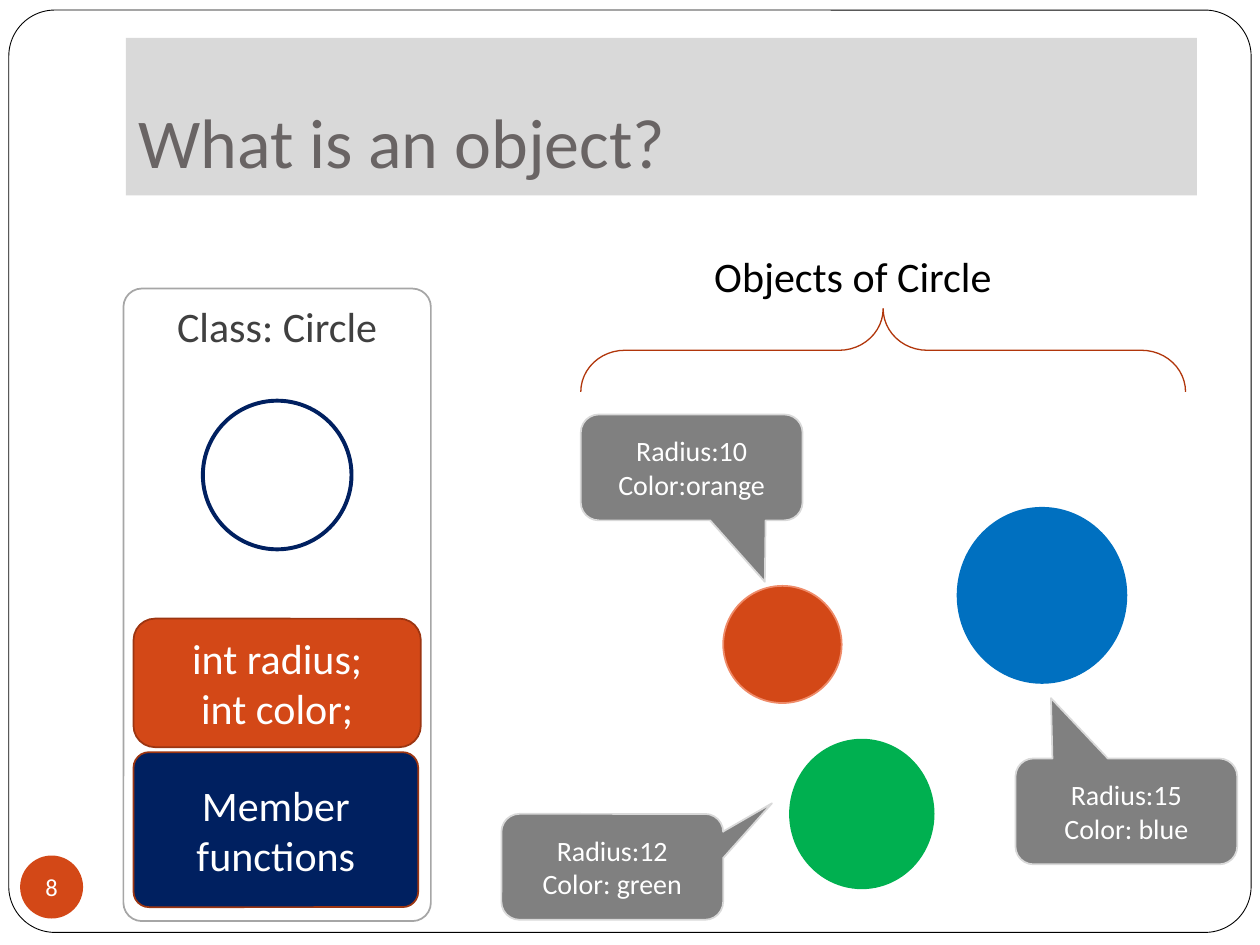
from dataclasses import dataclass
from typing import Optional

from pptx import Presentation
from pptx.dml.color import RGBColor
from pptx.enum.shapes import MSO_SHAPE as SHAPE
from pptx.enum.text import MSO_ANCHOR as ANCHOR, PP_ALIGN as ALIGN
from pptx.util import Inches, Pt

COLUMNS, ROWS = 100, 75
CELL = Inches(10) // COLUMNS
FONT = "Calibri"
COLORS = {
    "white": "FFFFFF", "black": "000000", "band": "D9D9D9", "title": "696464",
    "orange": "D34817", "rust": "9C3511", "peach": "EF8C6A", "brace": "B1360B",
    "navy": "002060", "blue": "0070C0", "green": "00B050",
    "gray": "808080", "frame": "A6A6A6", "ink": "404040",
}


@dataclass
class Box:
    """A shape placed in grid columns and rows."""
    kind: SHAPE
    col: float
    row: float
    cols: float
    rows: float
    fill: Optional[str] = None
    line: Optional[str] = None
    weight: float = 1
    adjust: tuple = ()
    rotation: float = 0


@dataclass
class CircleObject:
    col: float
    row: float
    cols: float
    rows: float
    fill: str
    line: str


@dataclass
class Callout:
    col: float
    row: float
    tip: tuple
    text: str


CIRCLES = [
    CircleObject(57.4, 46.5, 9.4, 9.3, "orange", "peach"),
    CircleObject(76, 40.3, 13.4, 13.9, "blue", "blue"),
    CircleObject(62.7, 58.7, 11.4, 11.8, "green", "green"),
]
CALLOUTS = [
    Callout(46.1, 32.9, (0.33, 1.08), "Radius:10\nColor:orange"),
    Callout(80.6, 60.2, (-0.34, -1.07), "Radius:15\nColor: blue"),
    Callout(39.8, 64.6, (0.72, -0.6), "Radius:12\nColor: green"),
]


def rgb(name: str) -> RGBColor:
    return RGBColor.from_string(COLORS[name])


def grid(*lengths: float) -> list:
    return [round(n * CELL) for n in lengths]


def draw(slide, box: Box):
    sp = slide.shapes.add_shape(box.kind, *grid(box.col, box.row, box.cols, box.rows))
    sp.shadow.inherit = False
    sp.rotation = box.rotation
    for i, value in enumerate(box.adjust):
        sp.adjustments[i] = value
    if box.fill:
        sp.fill.solid()
        sp.fill.fore_color.rgb = rgb(box.fill)
    else:
        sp.fill.background()
    if box.line:
        sp.line.color.rgb = rgb(box.line)
        sp.line.width = Pt(box.weight)
    else:
        sp.line.fill.background()
    return sp


def write(sp, text: str, size: float = 24, color: str = "white", align=ALIGN.CENTER,
          anchor=ANCHOR.MIDDLE, insets: tuple = (1, 0.5, 1, 0.5), wrap: bool = True) -> None:
    tf = sp.text_frame
    tf.word_wrap = wrap
    tf.vertical_anchor = anchor
    tf.margin_left, tf.margin_top, tf.margin_right, tf.margin_bottom = grid(*insets)
    for i, line in enumerate(text.split("\n")):
        p = tf.paragraphs[0] if i == 0 else tf.add_paragraph()
        p.alignment = align
        r = p.add_run()
        r.text = line
        r.font.name, r.font.size, r.font.color.rgb = FONT, Pt(size), rgb(color)


def draw_page(slide) -> None:
    draw(slide, Box(SHAPE.ROUNDED_RECTANGLE, 0.7, 0.8, 98.6, 73.2, "white", "black", 0.5, (0.05,)))
    title = draw(slide, Box(SHAPE.RECTANGLE, 10, 3, 85, 12.5, "band"))
    write(title, "What is an object?", size=40, color="title", align=ALIGN.LEFT,
          anchor=ANCHOR.BOTTOM, insets=(1, 0.5, 1, 1))
    number = draw(slide, Box(SHAPE.OVAL, 1.6, 67.9, 5, 5, "orange"))
    write(number, "8", size=14, insets=(0, 0, 0, 0), wrap=False)


def draw_class(slide) -> None:
    rounded = SHAPE.ROUNDED_RECTANGLE
    frame = draw(slide, Box(rounded, 9.8, 22.9, 24.4, 50.2, line="frame", adjust=(0.06,)))
    write(frame, "Class: Circle", color="ink", anchor=ANCHOR.TOP)
    fields = draw(slide, Box(rounded, 10.6, 49.1, 22.8, 10.2, "orange", "rust"))
    write(fields, "int radius;\nint color;")
    members = draw(slide, Box(rounded, 10.6, 59.7, 22.6, 12.3, "navy", "rust", adjust=(0.1,)))
    write(members, "Member functions")
    draw(slide, Box(SHAPE.OVAL, 16.1, 31.8, 11.8, 11.8, line="navy", weight=2.25))


def draw_objects(slide) -> None:
    for c in CIRCLES:
        draw(slide, Box(SHAPE.OVAL, c.col, c.row, c.cols, c.rows, c.fill, c.line))
    for c in CALLOUTS:
        sp = draw(slide, Box(SHAPE.ROUNDED_RECTANGULAR_CALLOUT, c.col, c.row, 17.6, 8.4,
                             "gray", "band", adjust=(*c.tip, 0.17)))
        write(sp, c.text, size=16)
    draw(slide, Box(SHAPE.RIGHT_BRACE, 66.8, 3.8, 6.6, 48, line="brace", weight=0.75,
                    adjust=(0.53, 0.5), rotation=270))
    heading = slide.shapes.add_textbox(*grid(55.7, 19.4, 28.9, 5))
    write(heading, "Objects of Circle", color="black", align=ALIGN.LEFT, anchor=ANCHOR.TOP)


def main() -> None:
    prs = Presentation()
    prs.slide_width, prs.slide_height = grid(COLUMNS, ROWS)
    slide = prs.slides.add_slide(prs.slide_layouts[6])
    draw_page(slide)
    draw_class(slide)
    draw_objects(slide)
    prs.save("out.pptx")


if __name__ == "__main__":
    main()
